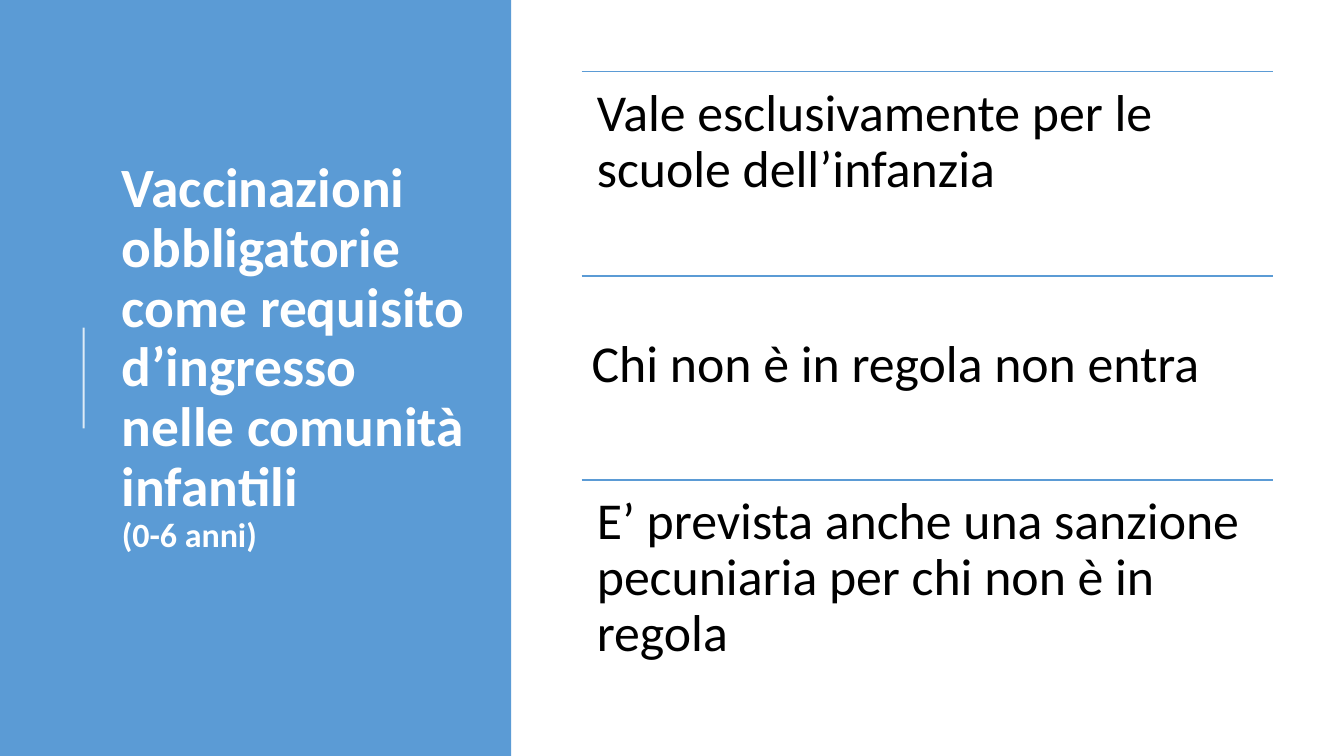
from lxml import etree
from pptx import Presentation
from pptx.dml.color import RGBColor
from pptx.enum import shapes, text
from pptx.oxml import ns
from pptx.util import Inches, Pt

COLORS = {"blue": "5B9BD5", "white": "FFFFFF", "black": "000000"}
FONT = "Calibri"

TITLE = "Vaccinazioni obbligatorie come requisito d’ingresso nelle comunità infantili"
AGES = "(0-6 anni)"
# Each point: wording, side inset, top inset
POINTS = [
    ("Vale esclusivamente per le scuole dell’infanzia", 0.15, 0.15),
    ("Chi non è in regola non entra", 0.1, 0.61),
    ("E’ prevista anche una sanzione pecuniaria per chi non è in regola", 0.15, 0.15),
]


def color(name):
    return RGBColor.from_string(COLORS[name])


def add_run(paragraph, wording, size, fill, bold=False):
    run = paragraph.add_run()
    run.text = wording
    run.font.name = FONT
    run.font.size = Pt(size)
    run.font.bold = bold
    run.font.color.rgb = color(fill)


def add_text(slide, box, runs, fill, bold=False, side=0.1, top=0.05,
             anchor=text.MSO_ANCHOR.TOP):
    """Place one paragraph; runs are (wording, size) pairs on separate lines."""
    frame = slide.shapes.add_textbox(*map(Inches, box)).text_frame
    frame.word_wrap = True
    frame.vertical_anchor = anchor
    frame.margin_left = frame.margin_right = Inches(side)
    frame.margin_top, frame.margin_bottom = Inches(top), Inches(0.05)
    paragraph = frame.paragraphs[0]
    paragraph.line_spacing = 0.9
    for index, (wording, size) in enumerate(runs):
        if index:
            paragraph.add_line_break()
        add_run(paragraph, wording, size, fill, bold)


def add_line(slide, start, end, fill, width, opacity=100):
    line = slide.shapes.add_connector(
        shapes.MSO_CONNECTOR.STRAIGHT, *map(Inches, start + end))
    line.line.color.rgb = color(fill)
    line.line.width = Pt(width)
    properties = line._element.spPr
    if opacity < 100:
        shade = properties.find(".//" + ns.qn("a:srgbClr"))
        etree.SubElement(shade, ns.qn("a:alpha"), val=str(opacity * 1000))
    etree.SubElement(properties, ns.qn("a:effectLst"))


def add_title_panel(slide, left, top, width, height):
    # Blue background
    panel = slide.shapes.add_shape(
        shapes.MSO_SHAPE.RECTANGLE, *map(Inches, (left, top, width, height)))
    panel.shadow.inherit = False
    panel.fill.solid()
    panel.fill.fore_color.rgb = color("blue")
    panel.line.fill.background()
    # Short accent line, centred on the panel height
    accent, middle = left + 0.83, top + height / 2
    add_line(slide, (accent, middle + 0.5), (accent, middle - 0.5),
             "white", 1.5, opacity=80)
    # Title
    add_text(slide, (left + 1.11, top + 1.16, 3.69, 4.77),
             [(TITLE, 39.6), (AGES, 24.3)], "white", bold=True,
             anchor=text.MSO_ANCHOR.MIDDLE)


def add_points(slide, left, top, width, height):
    row_height = height / len(POINTS)
    for index, (wording, side, inset) in enumerate(POINTS):
        row_top = top + index * row_height
        add_line(slide, (left, row_top), (left + width, row_top), "blue", 1)
        add_text(slide, (left, row_top, width, row_height),
                 [(wording, 37)], "black", side=side, top=inset)


def main():
    presentation = Presentation()
    presentation.slide_width = Inches(13.33)
    presentation.slide_height = Inches(7.5)
    slide = presentation.slides.add_slide(presentation.slide_layouts[6])
    add_title_panel(slide, 0, 0, 5.07, 7.5)
    add_points(slide, 5.77, 0.71, 6.86, 6.08)
    presentation.save("out.pptx")


if __name__ == "__main__":
    main()
